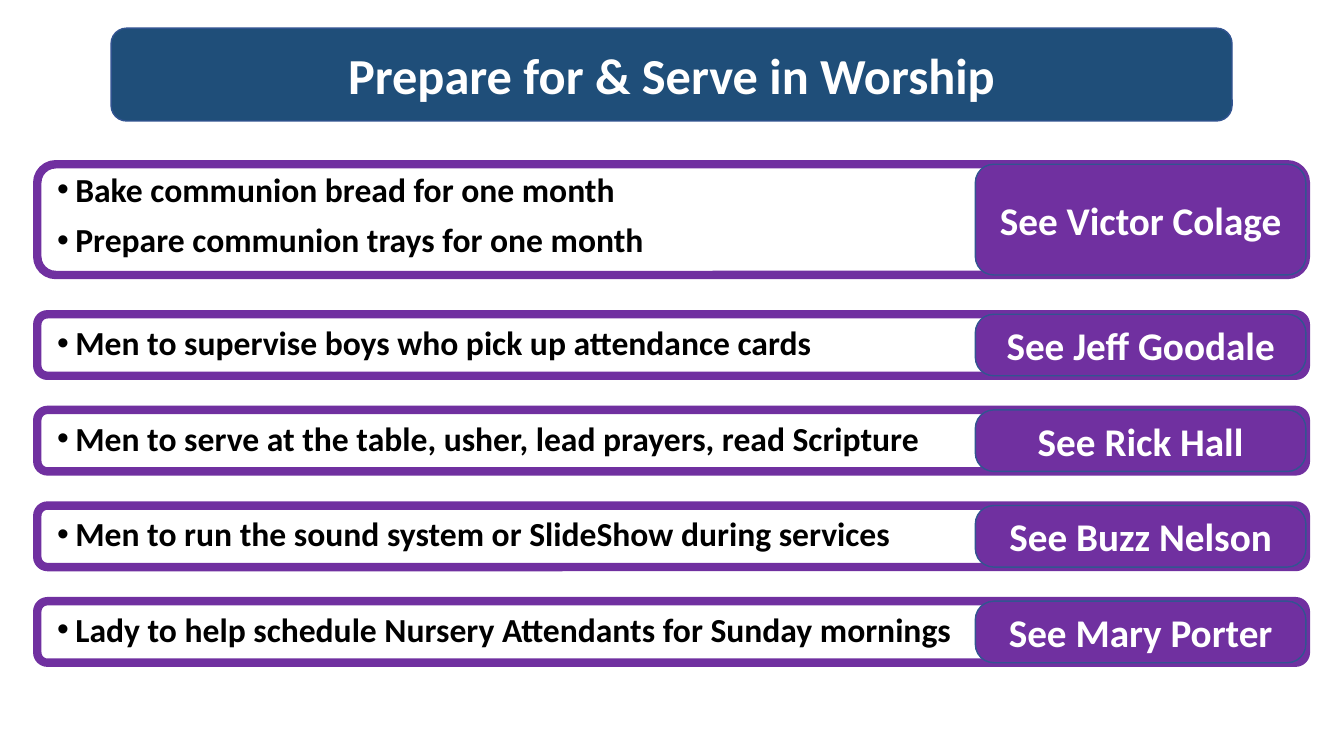
from dataclasses import dataclass

from lxml.etree import SubElement
from pptx import Presentation
from pptx.dml.color import RGBColor
from pptx.enum.shapes import MSO_SHAPE
from pptx.enum.text import MSO_ANCHOR, PP_ALIGN
from pptx.oxml.ns import qn
from pptx.util import Cm, Pt


@dataclass(frozen=True)
class Theme:
    """Colours, font and type sizes of the slide."""
    navy: RGBColor = RGBColor(0x1F, 0x4E, 0x79)
    outline: RGBColor = RGBColor(0x32, 0x54, 0x91)
    purple: RGBColor = RGBColor(0x70, 0x30, 0xA0)
    white: RGBColor = RGBColor(0xFF, 0xFF, 0xFF)
    black: RGBColor = RGBColor(0, 0, 0)
    font: str = "Calibri"
    title_size: int = 36
    contact_size: int = 28
    task_size: int = 24


@dataclass(frozen=True)
class Box:
    """A rectangle in centimetres."""
    left: float
    top: float
    width: float
    height: float

    def lengths(self):
        """Return the four measures as slide lengths."""
        return [Cm(v) for v in (self.left, self.top, self.width, self.height)]


THEME = Theme()
HEADING = "Prepare for & Serve in Worship"
BREAD_DUTY = (["Bake communion bread for one month",
               "Prepare communion trays for one month"], "See Victor Colage")
SINGLE_DUTIES = [
    (["Men to supervise boys who pick up attendance cards"], "See Jeff Goodale"),
    (["Men to serve at the table, usher, lead prayers, read Scripture"], "See Rick Hall"),
    (["Men to run the sound system or SlideShow during services"], "See Buzz Nelson"),
    (["Lady to help schedule Nursery Attendants for Sunday mornings"], "See Mary Porter"),
]


def apply(target, values):
    """Set each named attribute of the target."""
    for name, value in values.items():
        setattr(target, name, value)


def write(paragraph, text, size, color, **layout):
    """Put bold text in a paragraph and lay the paragraph out."""
    apply(paragraph, layout)
    run = paragraph.add_run()
    run.text = text
    apply(run.font, {"name": THEME.font, "size": Pt(size), "bold": True})
    run.font.color.rgb = color


def add_panel(slide, box, fill, line, line_width, corner=0.1667):
    """Draw a rounded rectangle, hollow when it has no fill."""
    panel = slide.shapes.add_shape(MSO_SHAPE.ROUNDED_RECTANGLE, *box.lengths())
    panel.adjustments[0] = corner
    panel.shadow.inherit = False
    if fill is None:
        panel.fill.background()
    else:
        panel.fill.solid()
        panel.fill.fore_color.rgb = fill
    panel.line.color.rgb = line
    panel.line.width = Pt(line_width)
    return panel


def add_heading(slide, box):
    """Draw the banner and set the slide title over it."""
    add_panel(slide, box, THEME.navy, THEME.outline, 1)
    title = slide.shapes.title
    apply(title, dict(zip(("left", "top", "width", "height"), box.lengths())))
    apply(title.text_frame, {"word_wrap": True, "vertical_anchor": MSO_ANCHOR.MIDDLE})
    write(title.text_frame.paragraphs[0], HEADING, THEME.title_size, THEME.white,
          alignment=PP_ALIGN.CENTER)
    slide.shapes._spTree.append(title._element)


def add_tasks(slide, box, tasks):
    """List the tasks as bullets."""
    frame = slide.shapes.add_textbox(*box.lengths()).text_frame
    frame.word_wrap = True
    for index, task in enumerate(tasks):
        paragraph = frame.add_paragraph() if index else frame.paragraphs[0]
        write(paragraph, task, THEME.task_size, THEME.black,
              line_spacing=0.9, space_before=Pt(10))
        properties = paragraph._p.get_or_add_pPr()
        properties.set("marL", str(Cm(0.46)))
        properties.set("indent", str(-Cm(0.46)))
        SubElement(properties, qn("a:buFont"), typeface="Arial")
        SubElement(properties, qn("a:buChar"), char="•")


def add_duty(slide, box, duty, text_inset, text_width, corner):
    """Draw a framed row of tasks with its contact at the right end."""
    tasks, person = duty
    add_tasks(slide, Box(box.left + 0.25, box.top + text_inset,
                         text_width, box.height - 2 * text_inset), tasks)
    add_panel(slide, box, None, THEME.purple, 6)
    contact_width = 8.33
    contact = add_panel(
        slide, Box(box.left + box.width - contact_width, box.top, contact_width, box.height),
        THEME.purple, THEME.outline, 1, corner)
    apply(contact.text_frame, {"word_wrap": True, "vertical_anchor": MSO_ANCHOR.MIDDLE})
    write(contact.text_frame.paragraphs[0], person, THEME.contact_size, THEME.white,
          alignment=PP_ALIGN.CENTER)


def main():
    """Build the slide and save it."""
    deck = Presentation()
    apply(deck, {"slide_width": Cm(33.87), "slide_height": Cm(19.05)})
    slide = deck.slides.add_slide(deck.slide_layouts[5])
    add_heading(slide, Box(2.8, 0.71, 28.25, 2.34))
    add_duty(slide, Box(0.94, 4.14, 31.97, 2.79), BREAD_DUTY, 0.1, 18.16, 0.1667)
    for index, duty in enumerate(SINGLE_DUTIES):
        add_duty(slide, Box(0.94, 7.92 + 2.41 * index, 31.97, 1.55), duty, 0.18, 28.85, 0.3)
    deck.save("out.pptx")


if __name__ == "__main__":
    main()
